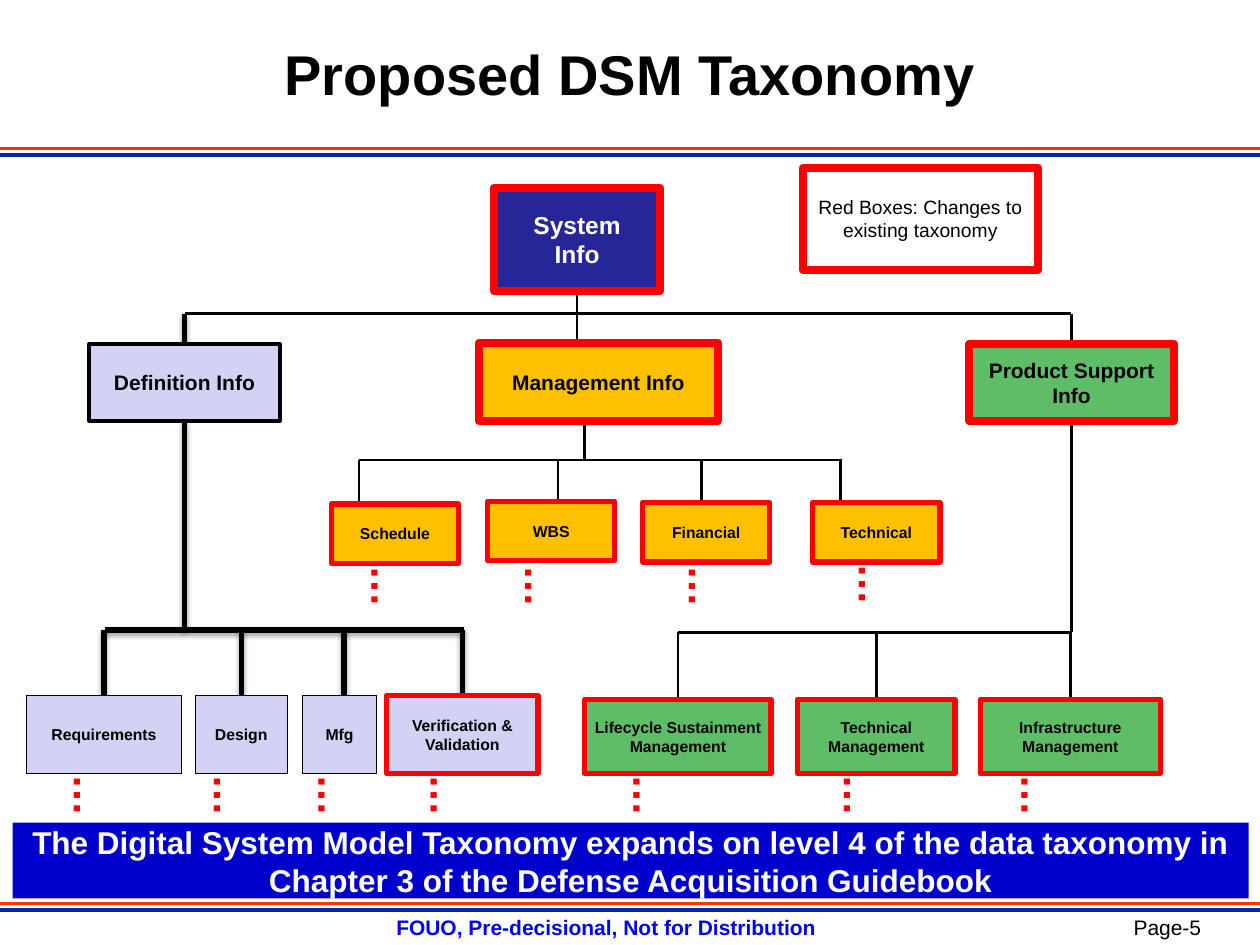
"""Build the Proposed DSM Taxonomy slide."""
from lxml.etree import SubElement
from pptx import Presentation
from pptx.dml.color import RGBColor
from pptx.enum.shapes import MSO_CONNECTOR, MSO_SHAPE
from pptx.enum.text import MSO_ANCHOR, PP_ALIGN
from pptx.oxml.ns import qn
from pptx.util import Inches, Pt

BLACK = RGBColor(0x00, 0x00, 0x00)
WHITE = RGBColor(0xFF, 0xFF, 0xFF)
RED = RGBColor(0xFF, 0x00, 0x00)
ORANGE = RGBColor(0xFF, 0x33, 0x00)
STRIPE_BLUE = RGBColor(0x03, 0x2A, 0xA1)
FOOTER_BLUE = RGBColor(0x00, 0x00, 0xFF)
BANNER_BLUE = RGBColor(0x00, 0x00, 0xCC)
NAVY = RGBColor(0x26, 0x26, 0x99)
LAVENDER = RGBColor(0xD2, 0xD2, 0xF4)
AMBER = RGBColor(0xFF, 0xC0, 0x00)
GREEN = RGBColor(0x5E, 0xBE, 0x67)

TOP, BOTTOM = 0, 2
TOP_RAIL, MANAGEMENT_RAIL, DEFINITION_RAIL, SUPPORT_RAIL = 2.49, 3.65, 5, 5.02


def write(frame, text, size, color=BLACK, bold=True, align=PP_ALIGN.CENTER):
    """Put formatted text, anchored to the middle, into a text frame."""
    frame.text = text
    frame.word_wrap = True
    frame.vertical_anchor = MSO_ANCHOR.MIDDLE
    for paragraph in frame.paragraphs:
        paragraph.alignment = align
        for run in paragraph.runs:
            run.font.name = "Arial"
            run.font.size = Pt(size)
            run.font.bold = bold
            run.font.color.rgb = color


def add_box(slide, place, text, size, fill, border, width, ink=BLACK, bold=True, inset=None):
    """Add a labelled rectangle; fill or border may be None."""
    box = slide.shapes.add_shape(MSO_SHAPE.RECTANGLE, *map(Inches, place))
    box.shadow.inherit = False
    if fill is None:
        box.fill.background()
    else:
        box.fill.solid()
        box.fill.fore_color.rgb = fill
    if border is None:
        box.line.fill.background()
    else:
        box.line.color.rgb = border
        box.line.width = Pt(width)
    frame = box.text_frame
    if inset is not None:
        frame.margin_left = frame.margin_right = Inches(inset)
        frame.margin_top = frame.margin_bottom = Inches(inset)
    write(frame, text, size, ink, bold)
    return box


def add_line(slide, start, end, color=BLACK, width=1.5, shadowed=False):
    """Add a straight line behind the boxes."""
    line = slide.shapes.add_connector(
        MSO_CONNECTOR.STRAIGHT, *map(Inches, (*start, *end)))
    line.line.color.rgb = color
    line.line.width = Pt(width)
    element = line._element
    effects = SubElement(element.spPr, qn("a:effectLst"))
    if shadowed:
        shadow = SubElement(effects, qn("a:outerShdw"), blurRad=str(Pt(3.1)),
                            dist=str(Pt(1.6)), dir="5400000", rotWithShape="0")
        shade = SubElement(shadow, qn("a:srgbClr"), val=str(BLACK))
        SubElement(shade, qn("a:alpha"), val="38000")
    element.getparent().insert(2, element)
    return line


def add_branch(slide, box, side, rail, **style):
    """Join the middle of a box's top or bottom to a horizontal rail."""
    middle = (box.left + box.width / 2) / Inches(1)
    edge = (box.top if side == TOP else box.top + box.height) / Inches(1)
    branch = add_line(slide, (middle, edge), (middle, rail), **style)
    branch.begin_connect(box, side)


def add_caption(slide, place, text, color, bold):
    """Add a footer caption."""
    caption = slide.shapes.add_textbox(*map(Inches, place))
    write(caption.text_frame, text, 12, color, bold)


def add_ellipsis(slide, left, top):
    """Add a vertical ellipsis that marks further levels."""
    dots = slide.shapes.add_textbox(*map(Inches, (left, top, 0.48, 0.44)))
    dots.rotation = 90
    write(dots.text_frame, "…", 24, RED, align=PP_ALIGN.LEFT)


def add_frame(slide):
    """Set the title, stripes and footer."""
    title = slide.shapes.title
    title.left, title.top, title.width, title.height = map(Inches, (1.17, 0.11, 7.66, 1.02))
    write(title.text_frame, "Proposed DSM Taxonomy", 32)
    title.text_frame.paragraphs[0].line_spacing = 0.85
    for orange_y in (1.18, 7.17):
        add_line(slide, (0, orange_y), (10, orange_y), ORANGE, 2)
        add_line(slide, (0, orange_y + 0.05), (10, orange_y + 0.05), STRIPE_BLUE, 2.25)
    add_caption(slide, (8.74, 7.21, 1.05, 0.3), "Page-5", BLACK, False)
    add_caption(slide, (0.93, 7.21, 7.81, 0.3),
                "FOUO, Pre-decisional, Not for Distribution ", FOOTER_BLUE, True)


def add_top_levels(slide):
    """Add the system box, the legend and the three information branches."""
    system = add_box(slide, (3.92, 1.49, 1.32, 0.82), "System\vInfo", 14, NAVY, RED, 4.5, WHITE)
    add_box(slide, (6.37, 1.33, 1.87, 0.81), "Red Boxes: Changes to existing taxonomy",
            11, None, RED, 4.5, bold=False)
    definition = add_box(slide, (0.71, 2.73, 1.51, 0.61), "Definition Info",
                         12, LAVENDER, BLACK, 2.25)
    add_box(slide, (3.8, 2.72, 1.9, 0.62), "Management Info", 12, AMBER, RED, 4.5)
    support = add_box(slide, (7.69, 2.73, 1.63, 0.61), "Product Support Info",
                      12, GREEN, RED, 4.5)
    add_line(slide, (1.47, TOP_RAIL), (8.5, TOP_RAIL))
    add_branch(slide, system, BOTTOM, 2.7)
    add_branch(slide, definition, TOP, TOP_RAIL, width=3, shadowed=True)
    add_branch(slide, definition, BOTTOM, DEFINITION_RAIL, width=3, shadowed=True)
    add_branch(slide, support, TOP, TOP_RAIL)
    add_branch(slide, support, BOTTOM, SUPPORT_RAIL)


def add_management_level(slide):
    """Add the four management topics."""
    topics = (("Schedule", 2.63, 4, 2.85, 2.84, 4.41), ("WBS", 3.87, 3.98, 4.43, 4.06, 4.41),
              ("Financial", 5.1, 3.99, 5.57, 5.36, 4.41),
              ("Technical", 6.45, 3.99, 6.67, 6.71, 4.39))
    for topic, left, top, branch_x, dots_left, dots_top in topics:
        add_box(slide, (left, top, 1.01, 0.47), topic, 9, AMBER, RED, 3)
        add_line(slide, (branch_x, MANAGEMENT_RAIL), (branch_x, top))
        add_ellipsis(slide, dots_left, dots_top)
    add_line(slide, (2.85, MANAGEMENT_RAIL), (6.68, MANAGEMENT_RAIL))
    add_line(slide, (4.64, 3.34), (4.64, MANAGEMENT_RAIL))


def add_definition_level(slide):
    """Add the four definition topics."""
    topics = (("Requirements", 0.21, 1.23, BLACK, 0.25, 0.48), ("Design", 1.55, 0.73, BLACK, 0.25, 1.59),
              ("Mfg", 2.4, 0.59, BLACK, 0.25, 2.42),
              ("Verification & Validation", 3.07, 1.2, RED, 3, 3.31))
    for topic, left, width, border, border_width, dots_left in topics:
        box = add_box(slide, (left, 5.52, width, 0.62), topic, 9, LAVENDER,
                      border, border_width, inset=0)
        if topic == "Mfg":
            add_line(slide, (2.73, DEFINITION_RAIL), (2.73, 5.52), width=3, shadowed=True)
        else:
            add_branch(slide, box, TOP, DEFINITION_RAIL, width=3, shadowed=True)
        add_ellipsis(slide, dots_left, 6.07)
    add_line(slide, (0.83, DEFINITION_RAIL), (3.68, DEFINITION_RAIL), width=3, shadowed=True)


def add_support_level(slide):
    """Add the three product support topics."""
    topics = (("Lifecycle Sustainment Management", 4.64, 1.48, 4.92),
              ("Technical\nManagement", 6.33, 1.25, 6.59),
              ("Infrastructure\vManagement", 7.78, 1.43, 8))
    for topic, left, width, dots_left in topics:
        box = add_box(slide, (left, 5.55, width, 0.59), topic, 9, GREEN, RED, 3, inset=0)
        add_branch(slide, box, TOP, SUPPORT_RAIL)
        add_ellipsis(slide, dots_left, 6.07)
    add_line(slide, (5.38, SUPPORT_RAIL), (8.49, SUPPORT_RAIL))


def main():
    """Assemble and save the slide."""
    deck = Presentation()
    deck.slide_width, deck.slide_height = Inches(10), Inches(7.5)
    slide = deck.slides.add_slide(deck.slide_layouts[5])
    add_frame(slide)
    add_top_levels(slide)
    add_management_level(slide)
    add_definition_level(slide)
    add_support_level(slide)
    add_box(slide, (0.1, 6.53, 9.81, 0.6),
            "The Digital System Model Taxonomy expands on level 4 of the data taxonomy in"
            "\vChapter 3 of the Defense Acquisition Guidebook", 18, BANNER_BLUE, None, 0, WHITE)
    deck.save("out.pptx")


if __name__ == "__main__":
    main()
